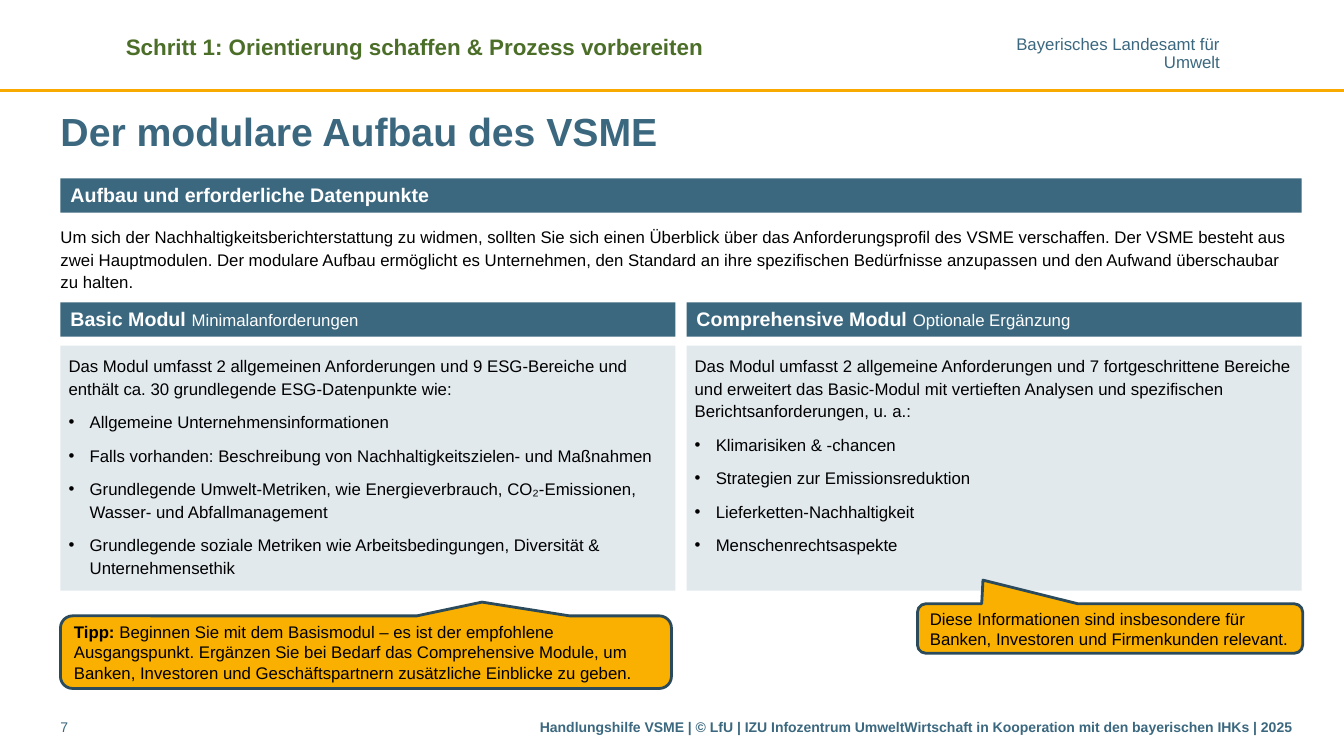
from dataclasses import dataclass

from lxml import etree
from pptx import Presentation
from pptx import util as u
from pptx.dml.color import RGBColor
from pptx.enum import shapes, text
from pptx.oxml.ns import qn


@dataclass(frozen=True)
class Theme:
    font: str = "Arial"
    blue: str = "3B687F"
    navy: str = "2B4B5C"
    green: str = "4B6E28"
    rule: str = "F9AA00"
    amber: str = "F9B000"
    pale: str = "E1E9ED"
    black: str = "000000"
    white: str = "FFFFFF"
    title: int = 28
    section: int = 16
    bar: int = 14
    body: int = 12
    small: int = 10


T = Theme()
SLIDE_W, SLIDE_H = 13.33, 7.5

# Two-column content grid
LEFT, WIDTH, GAP = 0.6, 12.31, 0.11
COL_W = (WIDTH - GAP) / 2
COLUMNS = [LEFT + i * (COL_W + GAP) for i in range(2)]
BAR_H = 0.34
INSETS = (0.1, 0.05)
FLUSH = (0, 0.05)


def rgb(colour):
    return RGBColor.from_string(colour)


def write(sp, paragraphs, size, colour, bold=False, align=text.PP_ALIGN.LEFT,
          anchor=text.MSO_ANCHOR.TOP, insets=INSETS, wrap=True):
    """Each paragraph is a string or a list of (text, size, bold) runs."""
    tf = sp.text_frame
    tf.word_wrap, tf.vertical_anchor = wrap, anchor
    tf.margin_left = tf.margin_right = u.Inches(insets[0])
    tf.margin_top = tf.margin_bottom = u.Inches(insets[1])
    for i, runs in enumerate(paragraphs):
        p = tf.add_paragraph() if i else tf.paragraphs[0]
        p.alignment = align
        if isinstance(runs, str):
            runs = [(runs, size, bold)]
        for words, run_size, run_bold in runs:
            r = p.add_run()
            r.text = words
            r.font.name, r.font.size = T.font, u.Pt(run_size)
            r.font.bold, r.font.color.rgb = run_bold, rgb(colour)
    return tf.paragraphs


def add_text(s, box, paragraphs, size, colour, **style):
    sp = s.shapes.add_textbox(*map(u.Inches, box))
    return write(sp, paragraphs, size, colour, **style)


def add_block(s, kind, box, fill, line=None):
    sp = s.shapes.add_shape(kind, *map(u.Inches, box))
    sp.shadow.inherit = False
    sp.fill.solid()
    sp.fill.fore_color.rgb = rgb(fill)
    if line:
        sp.line.color.rgb, sp.line.width = rgb(line), u.Pt(2)
    else:
        sp.line.fill.background()
    return sp


def add_bullet(p, indent=0.21):
    pPr = p._p.get_or_add_pPr()
    pPr.set("marL", str(u.Inches(indent)))
    pPr.set("indent", str(-u.Inches(indent)))
    colour = etree.SubElement(pPr, qn("a:buClr"))
    etree.SubElement(colour, qn("a:srgbClr"), val=T.black)
    etree.SubElement(pPr, qn("a:buFont"), typeface=T.font)
    etree.SubElement(pPr, qn("a:buChar"), char="•")


def header(s, x, y, w, h):
    rule = s.shapes.add_connector(shapes.MSO_CONNECTOR.STRAIGHT, *map(
        u.Inches, (x, y + h, x + w, y + h)))
    rule.line.color.rgb, rule.line.width = rgb(T.rule), u.Pt(2)
    etree.SubElement(rule._element.spPr, qn("a:effectLst"))
    agency = add_text(s, (x + 10.07, y + 0.37, 2.03, 0.34),
                      ["Bayerisches Landesamt für", "Umwelt"], T.body, T.blue,
                      align=text.PP_ALIGN.RIGHT, insets=(0, 0), wrap=False)
    for p in agency:
        p.line_spacing = 0.85
    add_text(s, (x + 1.15, y + 0.28, 6.3, 0.64),
             ["Schritt 1: Orientierung schaffen & Prozess vorbereiten"],
             T.section, T.green, bold=True)


def bar(s, x, y, w, heading, note=""):
    sp = add_block(s, shapes.MSO_SHAPE.RECTANGLE, (x, y, w, BAR_H), T.blue)
    runs = [(heading, T.bar, True)]
    if note:
        runs = [(heading + " ", T.bar, True), (note, T.body, False)]
    write(sp, [runs], T.bar, T.white)


def intro(s, x, y, w):
    add_text(s, (x, y, w, 0.55), ["Der modulare Aufbau des VSME"], T.title, T.blue,
             bold=True, anchor=text.MSO_ANCHOR.MIDDLE, insets=FLUSH)
    bar(s, x, y + 0.75, w, "Aufbau und erforderliche Datenpunkte")
    overview = add_text(s, (x, y + 1.16, w, 0.75), [
        "Um sich der Nachhaltigkeitsberichterstattung zu widmen, sollten Sie sich einen "
        "Überblick über das Anforderungsprofil des VSME verschaffen. Der VSME besteht aus "
        "zwei Hauptmodulen. Der modulare Aufbau ermöglicht es Unternehmen, den Standard an "
        "ihre spezifischen Bedürfnisse anzupassen und den Aufwand überschaubar zu halten."],
        T.body, T.black, insets=FLUSH)
    overview[0].line_spacing = u.Pt(16)


def module(s, x, y, w, h, heading, note, lead, points):
    bar(s, x, y, w, heading, note)
    top = 0.43
    sp = add_block(s, shapes.MSO_SHAPE.RECTANGLE, (x, y + top, w, h - top), T.pale)
    paragraphs = write(sp, [lead, *points], T.body, T.black, insets=(0.08, 0.08))
    for i, p in enumerate(paragraphs):
        p.line_spacing = u.Pt(16)
        if i:
            p.space_before = u.Pt(8)
            add_bullet(p)


def callout(s, x, y, w, h, tip, paragraphs):
    sp = add_block(s, shapes.MSO_SHAPE.ROUNDED_RECTANGULAR_CALLOUT, (x, y, w, h),
                   T.amber, T.navy)
    sp.adjustments[0], sp.adjustments[1] = tip
    write(sp, paragraphs, T.body, T.black, anchor=text.MSO_ANCHOR.MIDDLE)


def footer(s, x, y, w, h):
    add_text(s, (x, y, 0.7, h), ["7"], T.small, T.blue, insets=FLUSH)
    credit_w = 7.74
    add_text(s, (x + w - credit_w, y, credit_w, h),
             ["Handlungshilfe VSME | © LfU | IZU Infozentrum UmweltWirtschaft in "
              "Kooperation mit den bayerischen IHKs | 2025"],
             T.small, T.blue, bold=True, align=text.PP_ALIGN.RIGHT)


MODULES = [
    ("Basic Modul", "Minimalanforderungen",
     "Das Modul umfasst 2 allgemeinen Anforderungen und 9 ESG-Bereiche und enthält "
     "ca. 30 grundlegende ESG-Datenpunkte wie:",
     ["Allgemeine Unternehmensinformationen",
      "Falls vorhanden: Beschreibung von Nachhaltigkeitszielen- und Maßnahmen",
      "Grundlegende Umwelt-Metriken, wie Energieverbrauch, CO₂-Emissionen, "
      "Wasser- und Abfallmanagement",
      "Grundlegende soziale Metriken wie Arbeitsbedingungen, Diversität & "
      "Unternehmensethik"]),
    ("Comprehensive Modul", "Optionale Ergänzung",
     "Das Modul umfasst 2 allgemeine Anforderungen und 7 fortgeschrittene Bereiche und "
     "erweitert das Basic-Modul mit vertieften Analysen und spezifischen "
     "Berichtsanforderungen, u. a.:",
     ["Klimarisiken & -chancen", "Strategien zur Emissionsreduktion",
      "Lieferketten-Nachhaltigkeit", "Menschenrechtsaspekte"]),
]


def main():
    prs = Presentation()
    prs.slide_width, prs.slide_height = u.Inches(SLIDE_W), u.Inches(SLIDE_H)
    s = prs.slides.add_slide(prs.slide_layouts[6])
    header(s, 0, 0, SLIDE_W, 0.9)
    intro(s, LEFT, 1.02, WIDTH)
    for x, content in zip(COLUMNS, MODULES):
        module(s, x, 3, COL_W, 2.86, *content)
    callout(s, LEFT, 6.11, 6.06, 0.72, (0.19, -0.69), [[
        ("Tipp: ", T.body, True),
        ("Beginnen Sie mit dem Basismodul – es ist der empfohlene Ausgangspunkt. Ergänzen "
         "Sie bei Bedarf das Comprehensive Module, um Banken, Investoren und "
         "Geschäftspartnern zusätzliche Einblicke zu geben.", T.body, False)]])
    callout(s, 9.1, 5.99, 3.82, 0.49, (-0.33, -0.98),
            ["Diese Informationen sind insbesondere für",
             "Banken, Investoren und Firmenkunden relevant."])
    footer(s, LEFT, 7.08, WIDTH, 0.31)
    prs.save("out.pptx")


if __name__ == "__main__":
    main()
